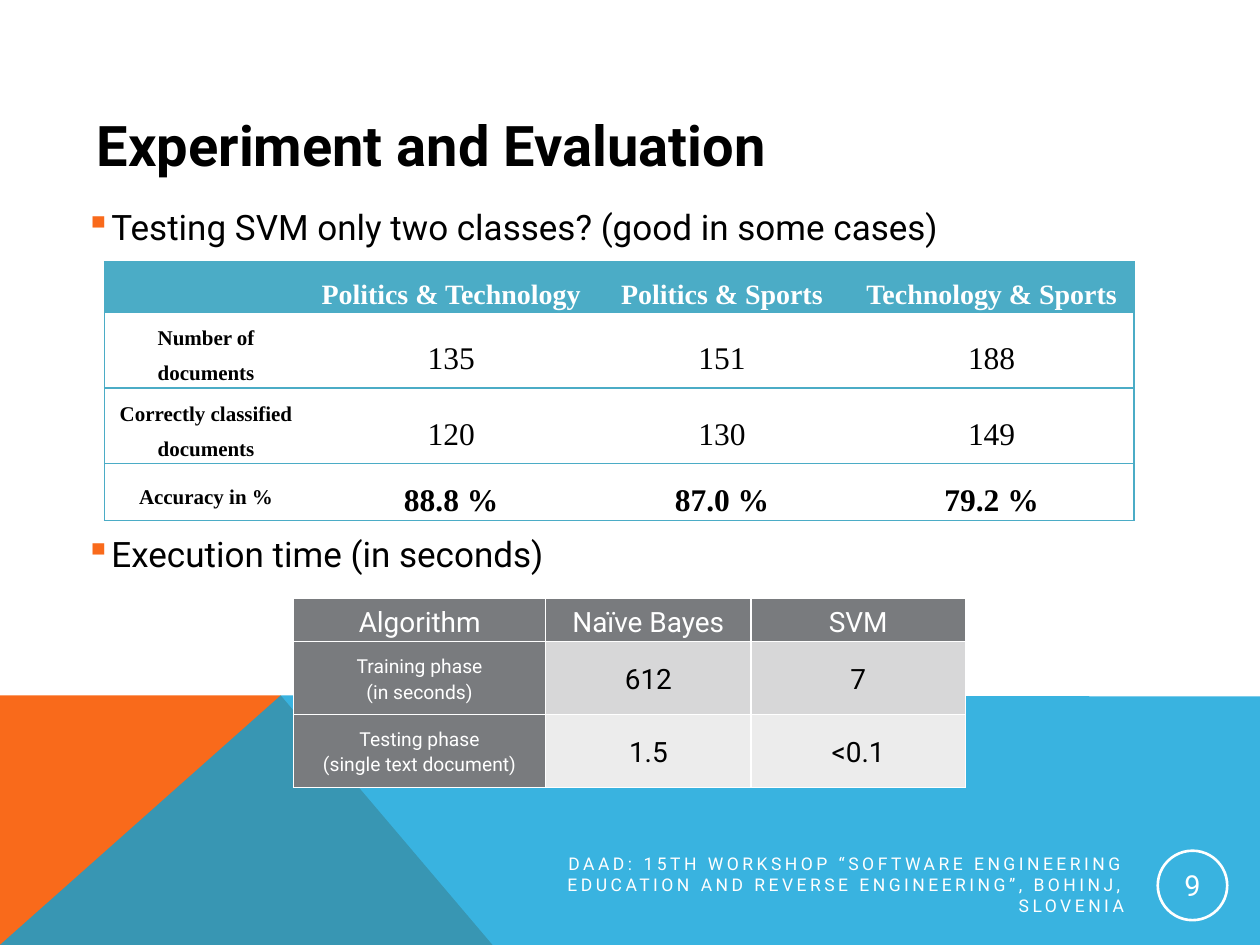
import pptx
import pptx.util
import pptx.dml.color
import pptx.enum.shapes
import pptx.enum.text
import pptx.oxml
import pptx.oxml.ns
import lxml.etree

Cm = pptx.util.Cm
Pt = pptx.util.Pt
RGBColor = pptx.dml.color.RGBColor
ALIGN = pptx.enum.text.PP_ALIGN
ANCHOR = pptx.enum.text.MSO_ANCHOR
qn = pptx.oxml.ns.qn

BLACK = RGBColor(0x00, 0x00, 0x00)
WHITE = RGBColor(0xFF, 0xFF, 0xFF)
ORANGE = RGBColor(0xF9, 0x6A, 0x1B)
BLUE = RGBColor(0x08, 0xA1, 0xD9)
TEAL = RGBColor(0x4B, 0xAC, 0xC6)
GREY = RGBColor(0x79, 0x7B, 0x7E)
BANDS = [RGBColor(0xD7, 0xD7, 0xD8), RGBColor(0xEC, 0xEC, 0xEC)]


def style_text(paragraph, font, size, color, bold=False, align=ALIGN.LEFT):
    paragraph.alignment = align
    paragraph.font.name = font
    paragraph.font.size = Pt(size)
    paragraph.font.color.rgb = color
    paragraph.font.bold = bold


def style_cell(cell, borders, fill, spacing, *text_style):
    tc_pr = cell._tc.get_or_add_tcPr()
    for side in "LRTB":
        line = lxml.etree.SubElement(tc_pr, qn(f"a:ln{side}"), w=str(Pt(1)))
        if side in borders:
            solid = lxml.etree.SubElement(line, qn("a:solidFill"))
            lxml.etree.SubElement(solid, qn("a:srgbClr"), val=str(borders[side]))
        else:
            lxml.etree.SubElement(line, qn("a:noFill"))
    if fill is None:
        cell.fill.background()
    else:
        cell.fill.solid()
        cell.fill.fore_color.rgb = fill
    cell.vertical_anchor = ANCHOR.MIDDLE
    cell.margin_left = cell.margin_right = Cm(0.19)
    cell.margin_top = cell.margin_bottom = 0
    for paragraph in cell.text_frame.paragraphs:
        paragraph.line_spacing = spacing
        style_text(paragraph, *text_style, align=ALIGN.CENTER)


prs = pptx.Presentation()
prs.slide_width = Cm(25.4)
prs.slide_height = Cm(19.05)
slide = prs.slides.add_slide(prs.slide_layouts[5])
shapes = slide.shapes

wedges = [
    (ORANGE, [(0, 19.05), (0, 14.02), (5.66, 14.02), (9.93, 19.05)]),
    (BLUE, [(0, 19.05), (5.66, 14.02), (25.4, 14.04), (25.4, 19.05)]),
]
for color, corners in wedges:
    points = [(Cm(x), Cm(y)) for x, y in corners]
    builder = shapes.build_freeform(*points[0])
    builder.add_line_segments(points[1:], close=True)
    wedge = builder.convert_to_shape()
    wedge.shadow.inherit = False
    wedge.fill.solid()
    wedge.fill.fore_color.rgb = color
    wedge.line.fill.background()
    if color == BLUE:
        tint = wedge._element.spPr.find(qn("a:solidFill"))[0]
        lxml.etree.SubElement(tint, qn("a:alpha"), val="80000")

title = shapes.title
title.left, title.top, title.width, title.height = Cm(1.7), Cm(2.11), Cm(22.86), Cm(1.9)
title.text_frame.text = "Experiment and Evaluation"
title.text_frame.vertical_anchor = ANCHOR.TOP
style_text(title.text_frame.paragraphs[0], "Roboto", 32, BLACK, True)

topics = shapes.add_textbox(Cm(1.47), Cm(4.01), Cm(22.86), Cm(10.59)).text_frame
topics.word_wrap = True
topics.text = "Testing SVM only two classes? (good in some cases)\nExecution time (in seconds)"
topics.paragraphs[1].space_before = Pt(163)
for topic in topics.paragraphs:
    style_text(topic, "Roboto", 20, BLACK)
    p_pr = topic._p.get_or_add_pPr()
    p_pr.set("marL", str(Cm(0.48)))
    p_pr.set("indent", str(-Cm(0.48)))
    bullet_color = lxml.etree.Element(qn("a:buClr"))
    lxml.etree.SubElement(bullet_color, qn("a:srgbClr"), val=str(ORANGE))
    bullet = lxml.etree.Element(qn("a:buChar"), char="▪")
    defaults = p_pr.find(qn("a:defRPr"))
    defaults.addprevious(bullet_color)
    defaults.addprevious(bullet)

accuracy_rows = [
    ["", "Politics & Technology", "Politics & Sports", "Technology & Sports"],
    ["Number of documents", "135", "151", "188"],
    ["Correctly classified documents", "120", "130", "149"],
    ["Accuracy in %", "88.8 %", "87.0 %", "79.2 %"],
]
timing_rows = [
    ["Algorithm", "Naïve Bayes", "SVM"],
    ["Training phase\n(in seconds)", "612", "7"],
    ["Testing phase\n(single text document)", "1.5", "<0.1"],
]
layouts = [
    (accuracy_rows, 2.11, 5.28, [4.09, 5.79, 5.13, 5.74], [0.94, 1.41, 1.41, 1.04]),
    (timing_rows, 5.92, 12.07, [5.08, 4.14, 4.32], [0.86, 1.47, 1.47]),
]
for rows, left, top, widths, heights in layouts:
    table = shapes.add_table(
        len(rows), len(widths), Cm(left), Cm(top), Cm(sum(widths)), Cm(sum(heights))
    ).table
    table.first_row = table.horz_banding = False
    for column, width in zip(table.columns, widths):
        column.width = Cm(width)
    for row, height in zip(table.rows, heights):
        row.height = Cm(height)
    for r, values in enumerate(rows):
        for c, value in enumerate(values):
            cell = table.cell(r, c)
            cell.text = value
            header, label = r == 0, c == 0
            if rows is accuracy_rows:
                borders = {"T": TEAL, "B": TEAL}
                if label:
                    borders["L"] = TEAL
                if c == len(values) - 1:
                    borders["R"] = TEAL
                size = 16 if header else 12 if label else 18
                bold = header or label or r == len(rows) - 1
                style_cell(cell, borders, TEAL if header else None, 1.5,
                           "Times New Roman", size, WHITE if header else BLACK, bold)
            else:
                dark = header or label
                size = 11 if label and not header else 16
                style_cell(cell, dict.fromkeys("LRTB", WHITE), GREY if dark else BANDS[r - 1],
                           1.15, "Roboto", size, WHITE if dark else BLACK)

footer = shapes.add_textbox(Cm(9.78), Cm(17.45), Cm(13.13), Cm(0.76)).text_frame
footer.word_wrap = True
footer.vertical_anchor = ANCHOR.MIDDLE
footer.text = (
    "DAAD: 15TH WORKSHOP “SOFTWARE ENGINEERING EDUCATION "
    "AND REVERSE ENGINEERING”, BOHINJ, SLOVENIA"
)
style_text(footer.paragraphs[0], "Roboto", 10, WHITE, align=ALIGN.RIGHT)
footer.paragraphs[0].runs[0]._r.get_or_add_rPr().set("spc", "200")

page_badge = shapes.add_shape(
    pptx.enum.shapes.MSO_SHAPE.OVAL, Cm(23.34), Cm(17.15), Cm(1.4), Cm(1.4)
)
page_badge.shadow.inherit = False
page_badge.fill.background()
page_badge.line.color.rgb = WHITE
page_badge.line.width = Pt(1.5)
page_number = page_badge.text_frame
page_number.margin_left = page_number.margin_right = Cm(0.03)
page_number.margin_top = page_number.margin_bottom = Cm(0.03)
page_number.vertical_anchor = ANCHOR.MIDDLE
page_number.text = "9"
style_text(page_number.paragraphs[0], "Roboto", 16.5, WHITE, align=ALIGN.CENTER)

prs.save("out.pptx")
